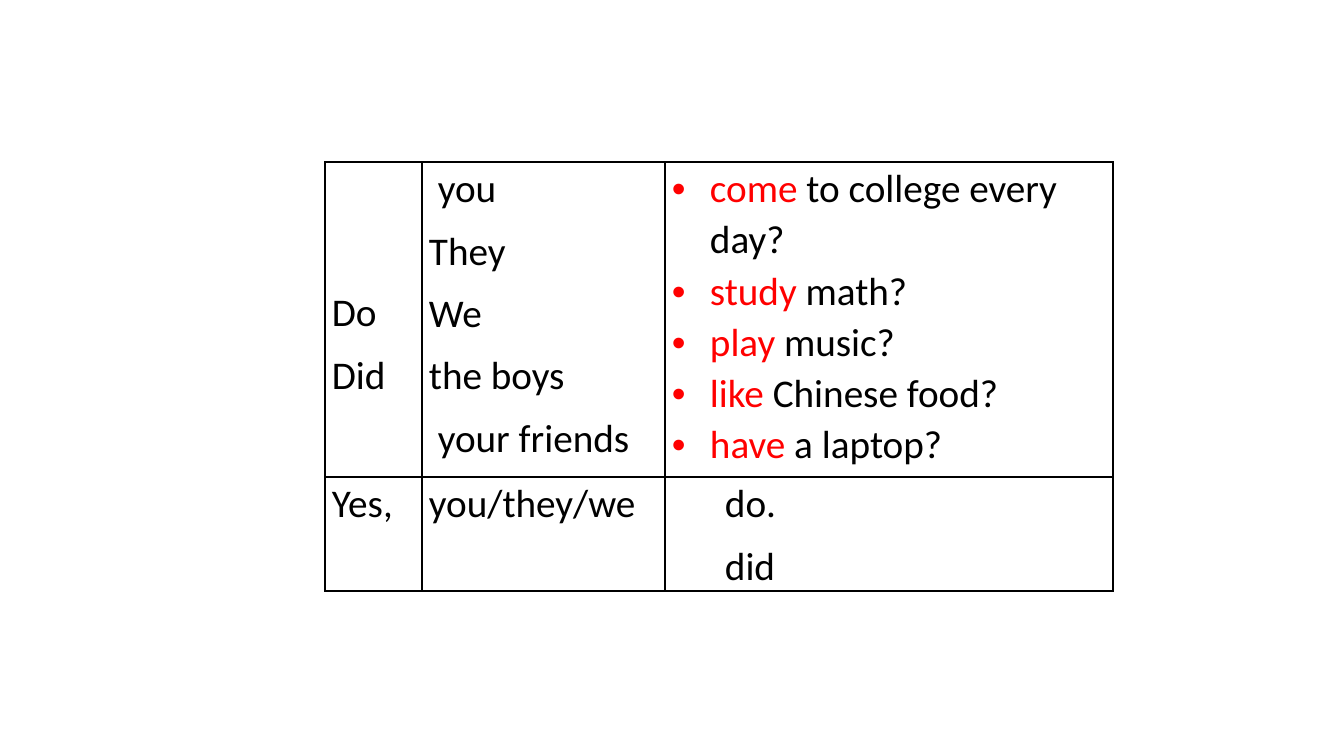
from lxml import etree
from pptx import Presentation, util as u
from pptx.dml.color import RGBColor
from pptx.oxml.ns import qn

BLACK = RGBColor(0, 0, 0)
RED = RGBColor(255, 0, 0)
FONT, SIZE = "Calibri", u.Pt(28)
LINE_SPACING, PARA_GAP = 1.07, u.Pt(8)

# Lengths in px
SLIDE = (1344, 756)
TABLE_LEFT, TABLE_TOP = 325, 162
COLS = (97, 243, 448)
ROWS = (315, 114)
SIDE_MARGIN = 7
AUXILIARY_TOP = 124
ANSWER_INDENT = 53
BULLET_INDENT = 38

AUXILIARIES = ["Do", "Did"]
SUBJECTS = [" you", "They", "We", "the boys", " your friends"]
PREDICATES = [
    ("come", " to college every day?"),
    ("study", " math?"),
    ("play", " music?"),
    ("like", " Chinese food?"),
    ("have", " a laptop?"),
]
ANSWERS = ["do.", "did"]

# Each cell: paragraphs, top margin, paragraph indent
GRID = [
    [(AUXILIARIES, AUXILIARY_TOP, 0), (SUBJECTS, 0, 0), (PREDICATES, 0, 0)],
    [(["Yes,"], 0, 0), (["you/they/we"], 0, 0), (ANSWERS, 0, ANSWER_INDENT)],
]


def px(n):
    return u.Emu(round(n * 914400 / 100.8))


def add_borders(cell):
    tc_pr = cell._tc.get_or_add_tcPr()
    for side in ("lnL", "lnR", "lnT", "lnB"):
        ln = etree.SubElement(tc_pr, qn(f"a:{side}"), w=str(u.Pt(1)))
        fill = etree.SubElement(ln, qn("a:solidFill"))
        etree.SubElement(fill, qn("a:srgbClr"), val=str(BLACK))


def add_bullet(p):
    p_pr = p._p.get_or_add_pPr()
    p_pr.set("marL", str(px(BULLET_INDENT)))
    p_pr.set("indent", str(-px(BULLET_INDENT)))
    color = etree.SubElement(p_pr, qn("a:buClr"))
    etree.SubElement(color, qn("a:srgbClr"), val=str(RED))
    etree.SubElement(p_pr, qn("a:buFont"), typeface="Arial")
    etree.SubElement(p_pr, qn("a:buChar"), char="•")


def add_run(p, words, color):
    r = p.add_run()
    r.text = words
    r.font.name, r.font.size = FONT, SIZE
    r.font.color.rgb = color


def fill_cell(cell, lines, top, indent):
    cell.margin_left = cell.margin_right = px(SIDE_MARGIN)
    cell.margin_top, cell.margin_bottom = px(top), 0
    add_borders(cell)
    cell.fill.background()
    tf = cell.text_frame
    for i, line in enumerate(lines):
        p = tf.add_paragraph() if i else tf.paragraphs[0]
        bulleted = isinstance(line, tuple)
        p.line_spacing = LINE_SPACING
        last = i == len(lines) - 1
        p.space_after = PARA_GAP if last or not bulleted else u.Pt(0)
        if bulleted:
            verb, rest = line
            add_bullet(p)
            add_run(p, verb, RED)
            add_run(p, rest, BLACK)
        else:
            if indent:
                p._p.get_or_add_pPr().set("marL", str(px(indent)))
            add_run(p, line, BLACK)


def main():
    prs = Presentation()
    prs.slide_width, prs.slide_height = map(px, SLIDE)
    s = prs.slides.add_slide(prs.slide_layouts[6])
    table = s.shapes.add_table(
        len(ROWS), len(COLS), px(TABLE_LEFT), px(TABLE_TOP),
        px(sum(COLS)), px(sum(ROWS))).table
    table.first_row = table.horz_banding = False
    for col, width in zip(table.columns, COLS):
        col.width = px(width)
    for row, height, contents in zip(table.rows, ROWS, GRID):
        row.height = px(height)
        for cell, content in zip(row.cells, contents):
            fill_cell(cell, *content)
    prs.save("out.pptx")


if __name__ == "__main__":
    main()
